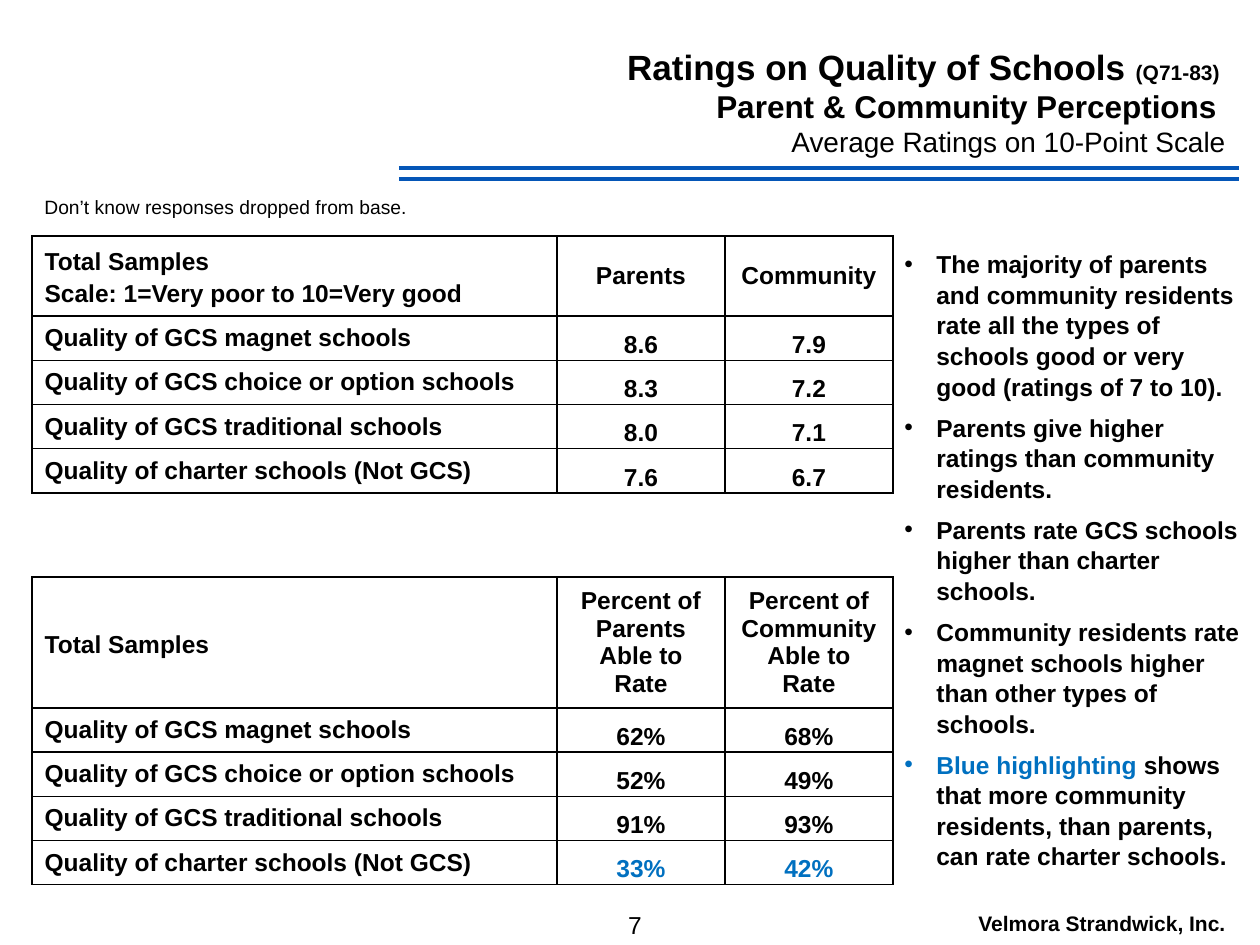
from dataclasses import dataclass

from lxml.etree import SubElement
from pptx import Presentation
from pptx.dml.color import RGBColor
from pptx.enum.shapes import MSO_CONNECTOR
from pptx.enum.text import MSO_ANCHOR, PP_ALIGN
from pptx.oxml.ns import qn
from pptx.util import Emu, Pt

PX_PER_INCH = 126


def px(length: int) -> Emu:
    return Emu(round(length * 914400 / PX_PER_INCH))


@dataclass(frozen=True)
class Theme:
    font: str = "Arial"
    ink: str = "000000"
    rule: str = "0556B7"
    highlight: str = "0070C0"
    title: int = 20
    subtitle: int = 18
    scale: int = 16
    body: int = 14
    small: int = 12
    note: int = 11
    rule_width: float = 2.25
    border_width: int = 1


THEME = Theme()


@dataclass(frozen=True)
class Area:
    left: int
    top: int
    width: int
    height: int


@dataclass(frozen=True)
class Rating:
    school: str
    parents: str
    community: str
    color: str = THEME.ink


@dataclass(frozen=True)
class RatingTable:
    top: int
    header_height: int
    row_height: int
    headers: tuple[tuple[str, ...], ...]
    ratings: tuple[Rating, ...]


SCHOOLS = (
    "Quality of GCS magnet schools",
    "Quality of GCS choice or option schools",
    "Quality of GCS traditional schools",
    "Quality of charter schools (Not GCS)",
)
TABLE_LEFT = 32
COLUMN_WIDTHS = (525, 168, 168)

AVERAGES = RatingTable(
    236, 76, 41,
    (("Total Samples", "Scale: 1=Very poor to 10=Very good"), ("Parents",), ("Community",)),
    tuple(map(Rating, SCHOOLS, ("8.6", "8.3", "8.0", "7.6"), ("7.9", "7.2", "7.1", "6.7"))),
)
ABLE_TO_RATE = RatingTable(
    577, 131, 44,
    (
        ("Total Samples",),
        ("Percent of Parents", "Able to Rate"),
        ("Percent of Community", "Able to Rate"),
    ),
    tuple(map(
        Rating, SCHOOLS, ("62%", "52%", "91%", "33%"), ("68%", "49%", "93%", "42%"),
        (THEME.ink, THEME.ink, THEME.ink, THEME.highlight),
    )),
)
FINDINGS = (
    "The majority of parents and community residents rate all the types of schools "
    "good or very good (ratings of 7 to 10).",
    "Parents give higher ratings than community residents.",
    "Parents rate GCS schools higher than charter schools.",
    "Community residents rate magnet schools higher than other types of schools.",
)


def write(paragraph, text: str, *, size: int = THEME.body, bold: bool = True,
          color: str = THEME.ink, align=PP_ALIGN.LEFT, spacing: float | None = None) -> None:
    paragraph.alignment = align
    if spacing:
        paragraph.line_spacing = spacing
    run = paragraph.add_run()
    run.text = text
    run.font.name = THEME.font
    run.font.size = Pt(size)
    run.font.bold = bold
    run.font.color.rgb = RGBColor.from_string(color)


def next_paragraph(frame, index: int):
    return frame.add_paragraph() if index else frame.paragraphs[0]


def add_frame(slide, area: Area):
    box = slide.shapes.add_textbox(*map(px, (area.left, area.top, area.width, area.height)))
    box.text_frame.word_wrap = True
    return box.text_frame


def add_rule(slide, y: int) -> None:
    rule = slide.shapes.add_connector(MSO_CONNECTOR.STRAIGHT, px(399), px(y), px(1239), px(y))
    rule.line.color.rgb = RGBColor.from_string(THEME.rule)
    rule.line.width = Pt(THEME.rule_width)
    SubElement(rule._element.spPr, qn("a:effectLst"))


def add_bullet(paragraph) -> None:
    properties = paragraph._p.get_or_add_pPr()
    properties.set("marL", str(px(32)))
    properties.set("indent", str(px(-32)))
    SubElement(properties, qn("a:buFont"), typeface=THEME.font)
    SubElement(properties, qn("a:buChar"), char="•")
    paragraph.space_after = Pt(6)


def style_cell(cell) -> None:
    cell.vertical_anchor = MSO_ANCHOR.MIDDLE
    properties = cell._tc.get_or_add_tcPr()
    for side in ("lnL", "lnR", "lnT", "lnB"):
        border = SubElement(properties, qn(f"a:{side}"), w=str(Pt(THEME.border_width)))
        fill = SubElement(border, qn("a:solidFill"))
        SubElement(fill, qn("a:srgbClr"), val=THEME.ink)
    cell.fill.background()


def add_rating_table(slide, content: RatingTable) -> None:
    row_count = len(content.ratings) + 1
    height = content.header_height + content.row_height * len(content.ratings)
    table = slide.shapes.add_table(
        row_count, len(COLUMN_WIDTHS), px(TABLE_LEFT), px(content.top),
        px(sum(COLUMN_WIDTHS)), px(height),
    ).table
    table.first_row = table.horz_banding = False
    for column, width in zip(table.columns, COLUMN_WIDTHS):
        column.width = px(width)
    for index, row in enumerate(table.rows):
        row.height = px(content.row_height if index else content.header_height)
    for cell in table.iter_cells():
        style_cell(cell)

    for column, lines in enumerate(content.headers):
        frame = table.cell(0, column).text_frame
        for index, line in enumerate(lines):
            write(next_paragraph(frame, index), line,
                  align=PP_ALIGN.CENTER if column else PP_ALIGN.LEFT,
                  spacing=None if column else 1.15)
    for row, rating in enumerate(content.ratings, 1):
        write(table.cell(row, 0).text_frame.paragraphs[0], rating.school)
        for column, score in enumerate((rating.parents, rating.community), 1):
            cell = table.cell(row, column)
            cell.margin_left = cell.margin_right = cell.margin_top = cell.margin_bottom = 0
            write(cell.text_frame.paragraphs[0], score, color=rating.color,
                  align=PP_ALIGN.CENTER, spacing=1.5)


def add_heading(slide) -> None:
    frame = add_frame(slide, Area(346, 39, 892, 126))
    title, subtitle, scale = (next_paragraph(frame, index) for index in range(3))
    write(title, "Ratings on Quality of Schools ", size=THEME.title, align=PP_ALIGN.RIGHT)
    write(title, "(Q71-83) ", size=THEME.small, align=PP_ALIGN.RIGHT)
    write(subtitle, "Parent & Community Perceptions ", size=THEME.subtitle, align=PP_ALIGN.RIGHT)
    write(scale, "Average Ratings on 10-Point Scale", size=THEME.scale, bold=False,
          align=PP_ALIGN.RIGHT)


def add_findings(slide) -> None:
    frame = add_frame(slide, Area(892, 242, 368, 619))
    for index, finding in enumerate(FINDINGS):
        paragraph = next_paragraph(frame, index)
        add_bullet(paragraph)
        write(paragraph, finding, spacing=1.04)
    highlighted = frame.add_paragraph()
    add_bullet(highlighted)
    write(highlighted, "Blue highlighting ", color=THEME.highlight, spacing=1.04)
    write(highlighted, "shows that more community residents, than parents, can rate charter schools.",
          spacing=1.04)


def main() -> None:
    deck = Presentation()
    deck.slide_width, deck.slide_height = px(1260), px(945)
    slide = deck.slides.add_slide(deck.slide_layouts[6])
    for y in (168, 179):
        add_rule(slide, y)
    add_heading(slide)
    write(add_frame(slide, Area(32, 189, 514, 37)).paragraphs[0],
          "Don’t know responses dropped from base.", size=THEME.note, bold=False)
    for content in (AVERAGES, ABLE_TO_RATE):
        add_rating_table(slide, content)
    add_findings(slide)
    write(add_frame(slide, Area(598, 904, 74, 41)).paragraphs[0], "7",
          bold=False, align=PP_ALIGN.CENTER)
    write(add_frame(slide, Area(955, 904, 294, 38)).paragraphs[0],
          "Velmora Strandwick, Inc.", size=THEME.small, align=PP_ALIGN.CENTER)
    deck.save("out.pptx")


if __name__ == "__main__":
    main()
